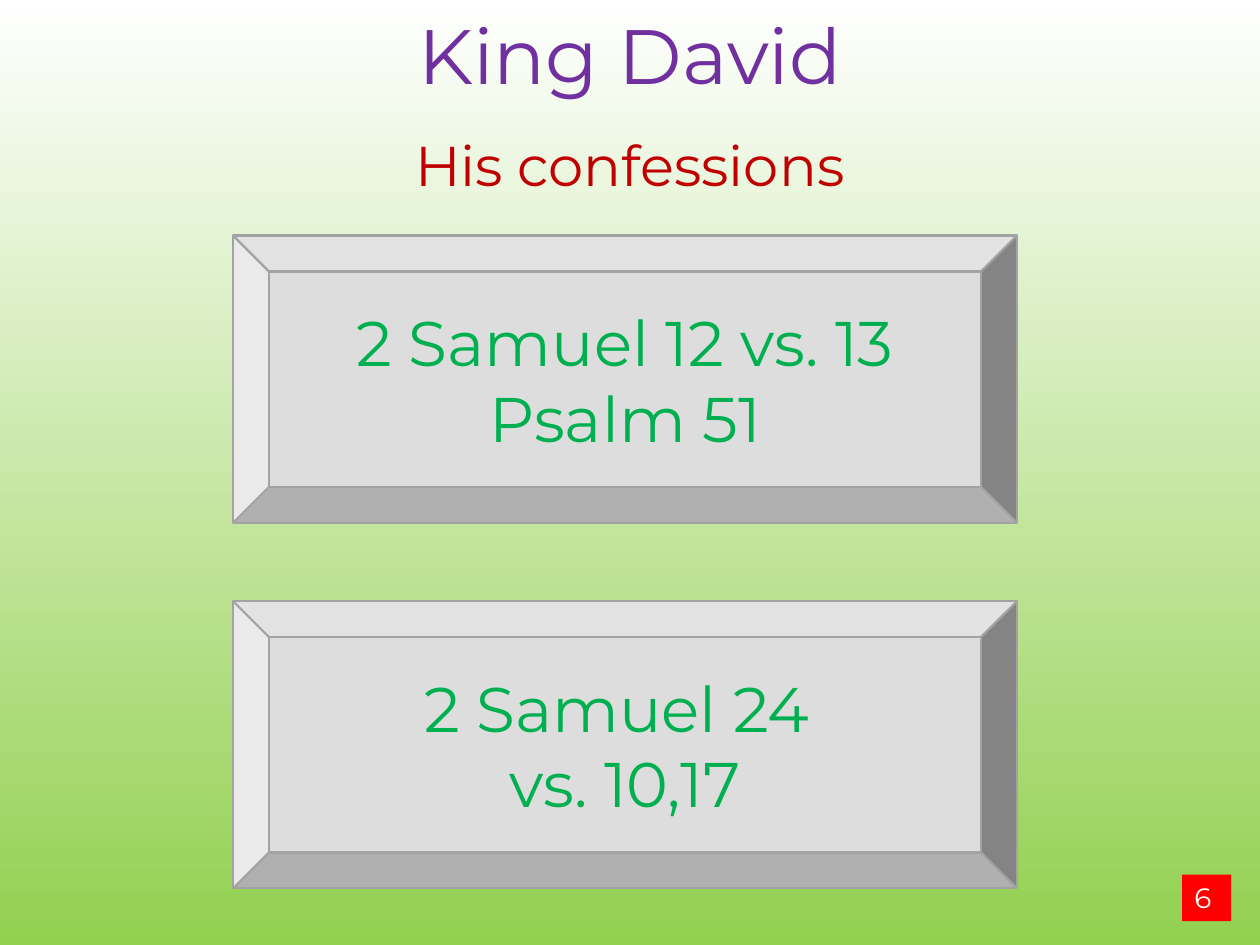
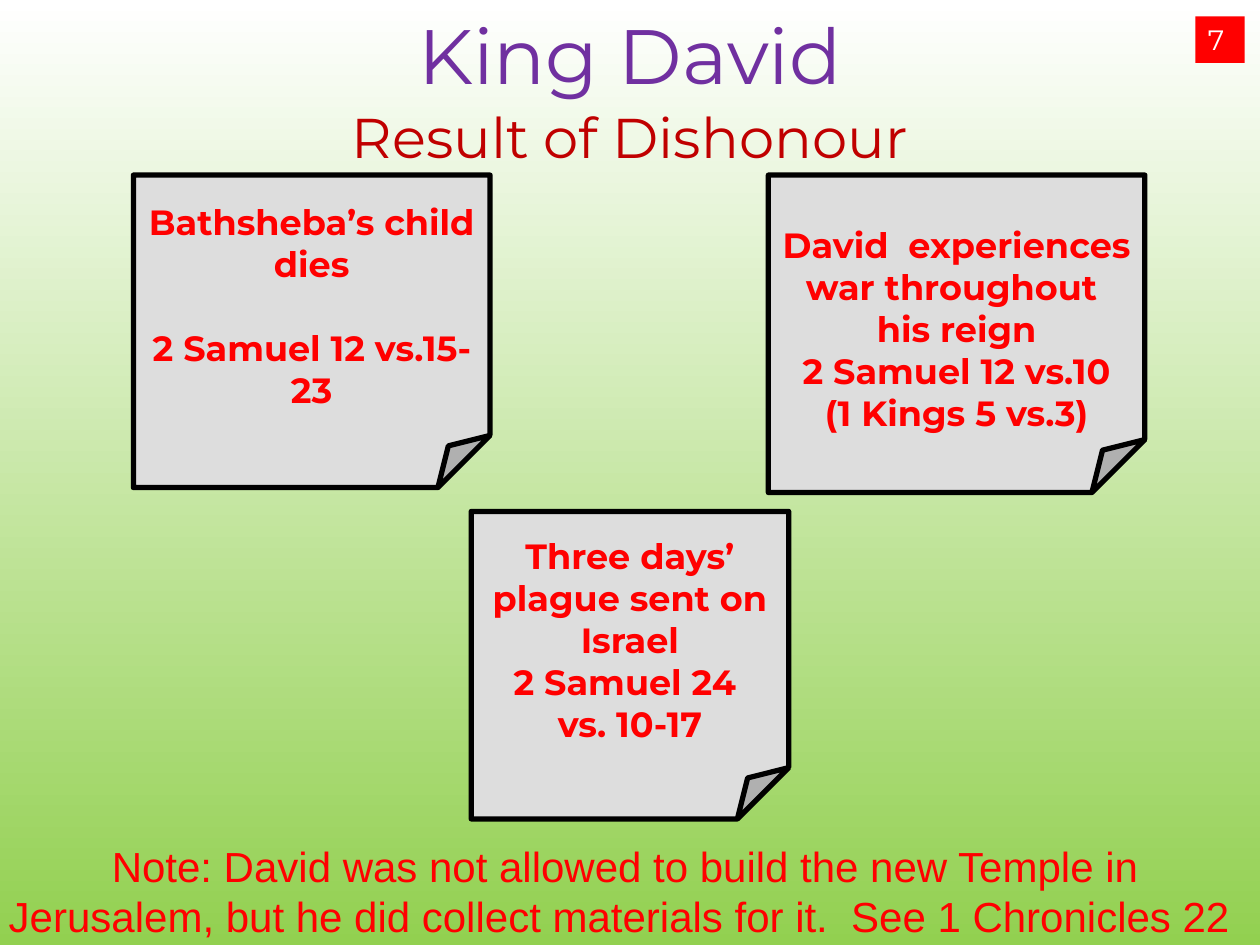
from dataclasses import dataclass
from typing import Optional

from pptx import Presentation
from pptx.dml.color import RGBColor as Rgb
from pptx.enum.shapes import MSO_SHAPE as Kind
from pptx.enum.text import MSO_ANCHOR as Anchor, PP_ALIGN as Align
from pptx.util import Cm, Pt

WIDE, HIGH = 25.4, 19.05
GREY, RED, WHITE = "DDDDDD", "FF0000", "FFFFFF"
LINE = 24  # height in points of one line on a note


@dataclass(frozen=True)
class Style:
    size: int
    tint: str
    face: str = "Montserrat"
    bold: bool = False
    align: Align = Align.CENTER
    anchor: Anchor = Anchor.TOP


@dataclass(frozen=True)
class Look:
    kind: Kind
    fill: str
    edge: Optional[str] = None
    width: float = 0


@dataclass(frozen=True)
class Part:
    box: tuple[float, float, float, float]
    text: tuple[str, ...]
    style: Style
    look: Optional[Look] = None
    gap: int = 0  # points between paragraphs
    top: float = 0.13  # top inset in cm


# Shared styles
TITLE = Style(44, "7030A0")
HEAD = Style(32, "C00000")
PLAQUE = Style(36, "00B050", anchor=Anchor.MIDDLE)
NOTE = Style(20, RED, bold=True, anchor=Anchor.MIDDLE)
FOOT = Style(24, RED, face="Arial")
PAGE = Style(16, WHITE, align=Align.LEFT)

BEVEL = Look(Kind.BEVEL, GREY, "A3A3A3", 1.25)
PAPER = Look(Kind.FOLDED_CORNER, GREY, "000000", 3)
BADGE = Look(Kind.RECTANGLE, RED)


def tone(code: str) -> Rgb:
    return Rgb.from_string(code)


def apply(target, form: dict) -> None:
    for key, value in form.items():
        setattr(target, key, value)


def write(frame, part: Part) -> None:
    style = part.style
    apply(frame, {"word_wrap": True, "vertical_anchor": style.anchor,
                  "margin_top": Cm(part.top)})
    for i, line in enumerate(part.text):
        para = frame.add_paragraph() if i else frame.paragraphs[0]
        apply(para, {"alignment": style.align,
                     "space_before": Pt(part.gap if i else 0)})
        run = para.add_run()
        run.text = line
        apply(run.font, {"size": Pt(style.size), "name": style.face,
                         "bold": style.bold})
        run.font.color.rgb = tone(style.tint)


def draw(slide, part: Part) -> None:
    box = [Cm(n) for n in part.box]
    look = part.look
    if look is None:
        shape = slide.shapes.add_textbox(*box)
    else:
        shape = slide.shapes.add_shape(look.kind, *box)
        shape.shadow.inherit = False
        shape.fill.solid()
        shape.fill.fore_color.rgb = tone(look.fill)
        if look.edge:
            shape.line.color.rgb = tone(look.edge)
            shape.line.width = Pt(look.width)
        else:
            shape.line.fill.background()
    write(shape.text_frame, part)


def paint(master) -> None:
    fill = master.background.fill
    fill.gradient()
    fill.gradient_angle = 270
    for stop, code, place in zip(fill.gradient_stops, (WHITE, "92D050"), (0, 1)):
        stop.color.rgb = tone(code)
        stop.position = place


def build(deck, head: str, drop: float, page: str,
          spot: tuple[float, float], parts: list[Part]) -> None:
    slide = deck.slides.add_slide(deck.slide_layouts[6])
    frame = [
        Part((6.71, 0.03, 11.99, 2.13), ("King David",), TITLE),
        Part((0, drop, WIDE, 1.63), (head,), HEAD),
        Part((*spot, 0.99, 0.94), (page,), PAGE, BADGE),
    ]
    for part in frame + parts:
        draw(slide, part)


def main() -> None:
    deck = Presentation()
    apply(deck, {"slide_width": Cm(WIDE), "slide_height": Cm(HIGH)})
    paint(deck.slide_master)

    # Confessions: plaques stacked at an equal step
    verses = [("2 Samuel 12 vs. 13", "Psalm 51"), ("2 Samuel 24 ", "vs. 10,17")]
    plaques = [Part((4.7, 4.75 + 7.37 * i, 15.8, 5.79), text, PLAQUE, BEVEL)
               for i, text in enumerate(verses)]
    build(deck, "His confessions", 2.51, "6", (23.83, 17.63), plaques)

    # Results: three paper notes and a closing remark
    notes = [
        Part((2.69, 3.53, 7.19, 6.3),
             ("Bathsheba’s child dies", "2 Samuel 12 vs.15-23"),
             NOTE, PAPER, gap=LINE),
        Part((15.49, 3.53, 7.59, 6.4),
             ("David  experiences ", "war throughout ", "his reign",
              "2 Samuel 12 vs.10", "(1 Kings 5 vs.3)"),
             NOTE, PAPER, top=0.98),
        Part((9.5, 10.31, 6.4, 6.2),
             ("Three days’ plague sent on Israel", "2 Samuel 24 ", "vs. 10-17"),
             NOTE, PAPER),
        Part((-0.1, 16.81, WIDE, 2.31),
             ("Note: David was not allowed to build the new Temple in Jerusalem, "
              "but he did collect materials for it.  See 1 Chronicles 22 ",), FOOT),
    ]
    build(deck, "Result of Dishonour", 1.93, "7", (24.1, 0.33), notes)
    deck.save("out.pptx")


if __name__ == "__main__":
    main()
